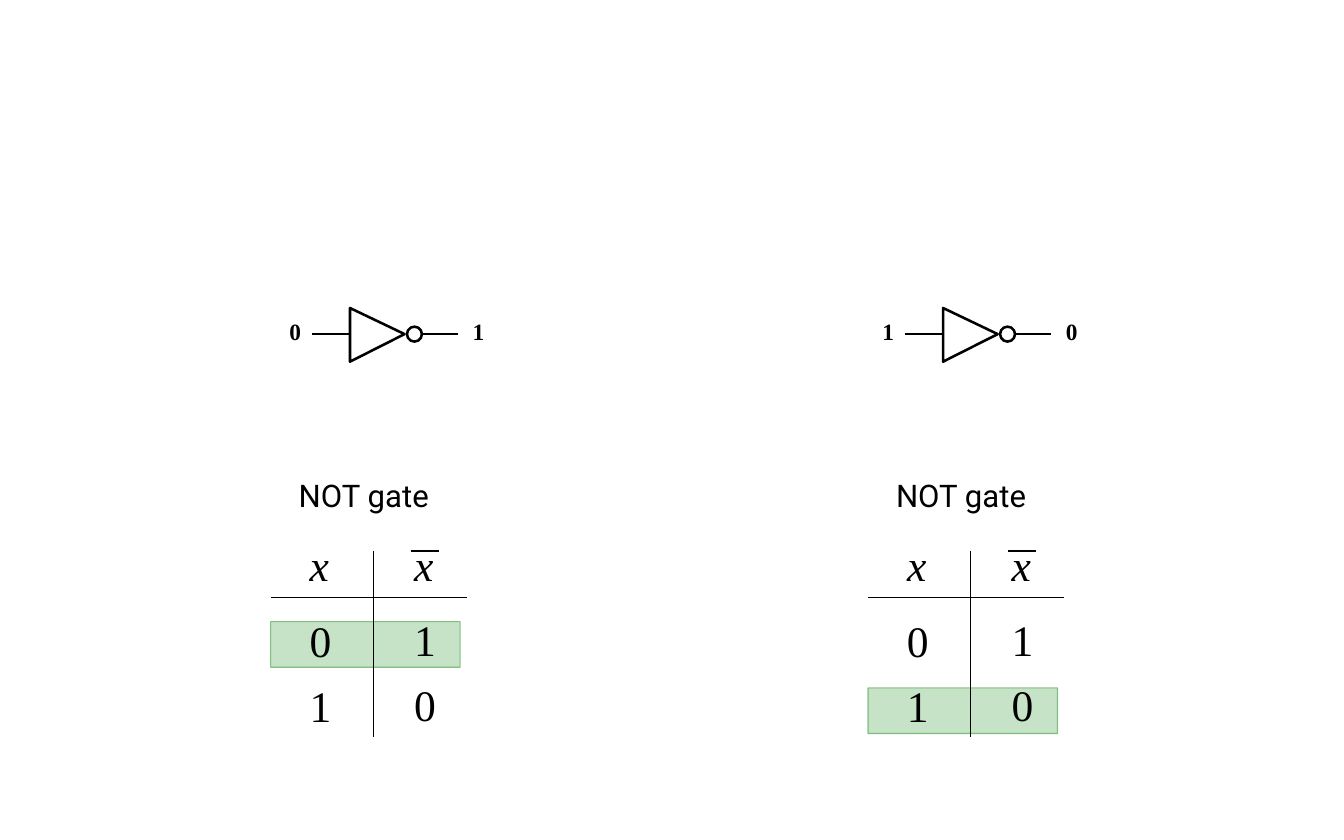
from lxml import etree
from pptx import Presentation
from pptx.dml.color import RGBColor
from pptx.enum.shapes import MSO_CONNECTOR, MSO_SHAPE
from pptx.enum.text import MSO_AUTO_SIZE
from pptx.oxml.ns import qn
from pptx.util import Inches, Pt

STRAIGHT = MSO_CONNECTOR.STRAIGHT
RECTANGLE = MSO_SHAPE.RECTANGLE
OVAL = MSO_SHAPE.OVAL
FIT = MSO_AUTO_SIZE.SHAPE_TO_FIT_TEXT
BLACK = RGBColor.from_string("000000")
GREEN = RGBColor.from_string("008000")
SERIF = "Times New Roman"

prs = Presentation()
prs.slide_width, prs.slide_height = Inches(12), Inches(7.5)
slide = prs.slides.add_slide(prs.slide_layouts[6])
UNIT = prs.slide_width / 144  # square grid of 144 columns by 90 rows


def add_text(shapes, text, left, top, width, height, size, font=SERIF,
             bold=False, italic=False, inset=0):
    box = shapes.add_textbox(*(round(v * UNIT) for v in (left, top, width, height)))
    frame = box.text_frame
    frame.text = text
    frame.word_wrap = False
    frame.auto_size = FIT
    frame.margin_left = frame.margin_right = Inches(2 * inset)
    frame.margin_top = frame.margin_bottom = Inches(inset)
    style = frame.paragraphs[0].runs[0].font
    style.name, style.size = font, Pt(size)
    style.bold, style.italic = bold, italic
    style.color.rgb = BLACK


def add_line(shapes, x1, y1, x2, y2, weight):
    line = shapes.add_connector(STRAIGHT, *(round(v * UNIT) for v in (x1, y1, x2, y2)))
    line.line.color.rgb = BLACK
    line.line.width = Pt(weight)
    etree.SubElement(line._element.spPr, qn("a:effectLst"))


WIRE_WEIGHT = 1.63
WIRE_Y = 35.8
ROW_TOPS = [65.2, 72.1]
HIGHLIGHT_TOPS = [66.6, 73.7]
TRUTH_TABLE = [("0", "1"), ("1", "0")]

# Each half of the slide shows one row of the truth table at work
for active, (signal_in, signal_out) in enumerate(TRUTH_TABLE):
    gate_x = 31 + 63.55 * active
    table_x = 29 + 64 * active

    # Highlight of the active row
    highlight = slide.shapes.add_shape(
        RECTANGLE, round(table_x * UNIT), round(HIGHLIGHT_TOPS[active] * UNIT),
        round(20.3 * UNIT), round(4.9 * UNIT))
    highlight.shadow.inherit = False
    highlight.fill.solid()
    highlight.fill.fore_color.rgb = GREEN
    highlight.line.color.rgb = GREEN
    highlight.line.width = Pt(0.75)
    opacities = (22000, 43000)  # fill, then outline
    for color, opacity in zip(highlight._element.spPr.iter(qn("a:srgbClr")), opacities):
        etree.SubElement(color, qn("a:alpha"), val=str(opacity))

    add_text(slide.shapes, "NOT gate", table_x + 3, 51, 14, 4, 20, font="Roboto")

    # Gate symbol with its input and output
    gate = slide.shapes.add_group_shape().shapes
    add_text(gate, signal_in, gate_x, 34, 1.9, 3, 15, bold=True)
    add_text(gate, signal_out, gate_x + 19.65, 34, 1.9, 3, 15, bold=True)
    add_line(gate, gate_x + 2.4, WIRE_Y, gate_x + 6.5, WIRE_Y, WIRE_WEIGHT)
    add_line(gate, gate_x + 14.2, WIRE_Y, gate_x + 18.1, WIRE_Y, WIRE_WEIGHT)
    outline = gate.build_freeform(
        round((gate_x + 12.35) * UNIT), round(WIRE_Y * UNIT))
    outline.add_line_segments(
        [(round((gate_x + 6.5) * UNIT), round(y * UNIT)) for y in (38.75, 33)])
    triangle = outline.convert_to_shape()
    bubble = gate.add_shape(
        OVAL, round((gate_x + 12.6) * UNIT), round((WIRE_Y - 0.8) * UNIT),
        round(1.6 * UNIT), round(1.6 * UNIT))
    for part in (triangle, bubble):
        part.shadow.inherit = False
        part.fill.background()
        part.line.color.rgb = BLACK
        part.line.width = Pt(WIRE_WEIGHT)

    # Truth table: rules, headings, overbar and values
    table = slide.shapes.add_group_shape().shapes
    add_line(table, table_x + 11, 59, table_x + 11, 79, 0.75)
    add_line(table, table_x, 64, table_x + 21, 64, 0.75)
    add_line(table, table_x + 15, 59, table_x + 18, 59, 1.25)
    for column, column_x in enumerate((table_x + 3, table_x + 14.2)):
        add_text(table, "x", column_x, 57, 4.5, 6.8, 28, italic=True, inset=0.05)
        for values, top in zip(TRUTH_TABLE, ROW_TOPS):
            add_text(table, values[column], column_x, top - 0.1 * column,
                     4.8, 6.8, 28, inset=0.05)

prs.save("out.pptx")
